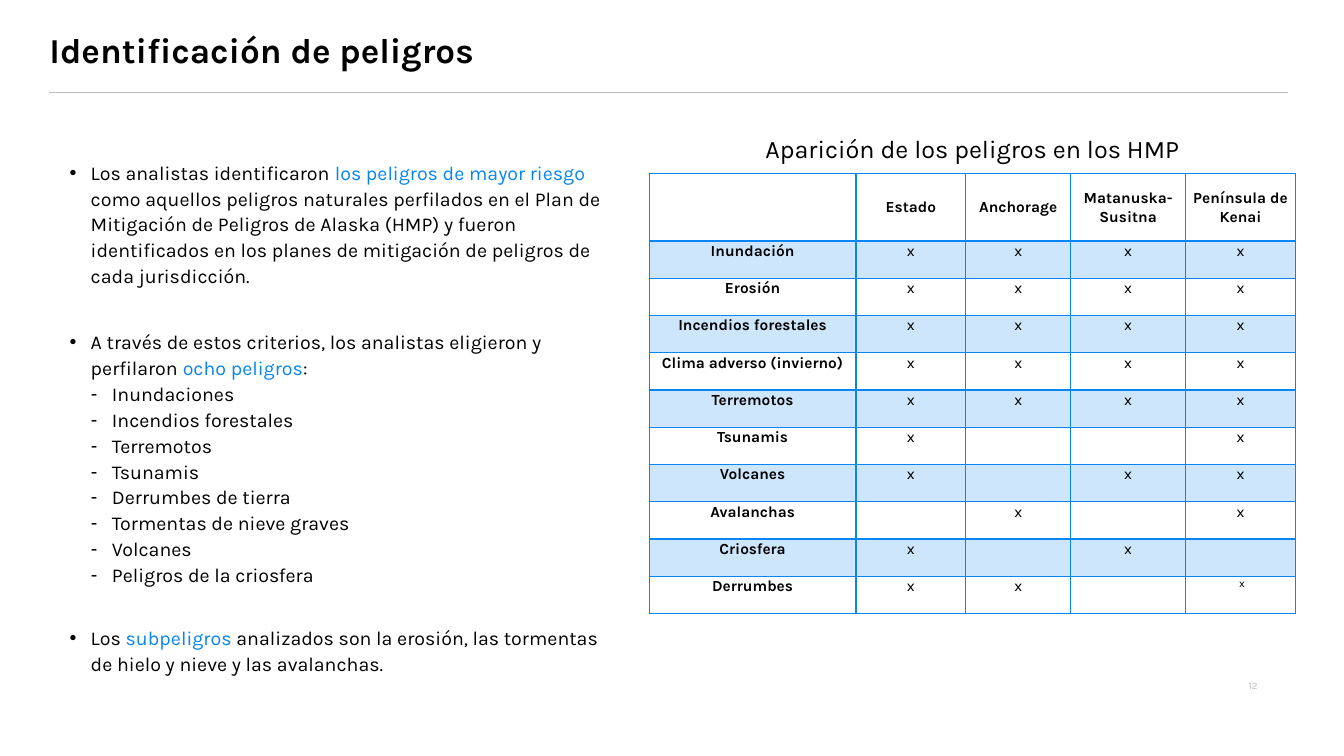
from lxml import etree
from pptx import Presentation, util as u
from pptx.dml.color import RGBColor
from pptx.enum import shapes, text
from pptx.oxml import ns

BLACK = RGBColor(0x00, 0x00, 0x00)
BLUE = RGBColor(0x07, 0x85, 0xF2)
GRAY = RGBColor(0xBC, 0xBE, 0xC0)
FONT = "Karla"

HEADING = "Identificación de peligros"
PAGE = "12"
CAPTION = "Aparición de los peligros en los HMP"

POINTS = [
    (0, 0, [("Los analistas identificaron ", BLACK),
            ("los peligros de mayor riesgo ", BLUE),
            ("como aquellos peligros naturales perfilados en el Plan de "
             "Mitigación de Peligros de Alaska (HMP) y fueron identificados en "
             "los planes de mitigación de peligros de cada jurisdicción.", BLACK)]),
    (0, 28.7, [("A través de estos criterios, los analistas eligieron y perfilaron ", BLACK),
               ("ocho peligros", BLUE), (":", BLACK)]),
    *[(1, 0, [(hazard, BLACK)]) for hazard in (
        "Inundaciones", "Incendios forestales", "Terremotos", "Tsunamis",
        "Derrumbes de tierra", "Tormentas de nieve graves", "Volcanes",
        "Peligros de la criosfera")],
    (0, 26.6, [("Los ", BLACK), ("subpeligros ", BLUE),
               ("analizados son la erosión, las tormentas de hielo y nieve y "
                "las avalanchas.", BLACK)]),
]

PLACES = ["", "Estado", "Anchorage", "Matanuska-Susitna", "Península de Kenai"]
OCCURRENCE = [
    ("Inundación", "xxxx"),
    ("Erosión", "xxxx"),
    ("Incendios forestales", "xxxx"),
    ("Clima adverso (invierno)", "xxxx"),
    ("Terremotos", "xxxx"),
    ("Tsunamis", "x--x"),
    ("Volcanes", "x-xx"),
    ("Avalanchas", "-x-x"),
    ("Criosfera", "x-x-"),
    ("Derrumbes", "xx-x"),
]
COLUMNS = [2.05, 1.09, 1.04, 1.14, 1.09]
HEADER_HEIGHT, ROW_HEIGHT = 0.67, 0.37
TABLE_LEFT, TABLE_TOP, TABLE_WIDTH = 6.44, 1.72, sum(COLUMNS)
MARGIN = 0.49


def add_run(paragraph, words, size, color=BLACK, bold=False):
    run = paragraph.add_run()
    run.text = words
    run.font.name = FONT
    run.font.size = u.Pt(size)
    run.font.bold = bold
    run.font.color.rgb = color


def place(shape, *box):
    shape.left, shape.top, shape.width, shape.height = map(u.Inches, box)


def prepare(frame, anchor, side=0.0):
    frame.word_wrap = True
    frame.auto_size = text.MSO_AUTO_SIZE.NONE
    frame.vertical_anchor = anchor
    frame.margin_left = frame.margin_right = u.Inches(side)
    frame.margin_top = frame.margin_bottom = u.Inches(0.05)


def set_bullet(paragraph, symbol, left):
    props = paragraph._p.get_or_add_pPr()
    props.set("marL", str(u.Inches(left)))
    props.set("indent", str(-u.Inches(0.21)))
    font = etree.SubElement(props, ns.qn("a:buFont"))
    font.set("typeface", "Arial")
    etree.SubElement(props, ns.qn("a:buChar")).set("char", symbol)


def set_borders(cell, heavy):
    props = cell._tc.get_or_add_tcPr()
    for side in ("lnL", "lnR", "lnT", "lnB"):
        width = 2 if side in heavy else 1
        line = etree.SubElement(props, ns.qn("a:" + side))
        line.set("w", str(u.Pt(width)))
        solid = etree.SubElement(line, ns.qn("a:solidFill"))
        etree.SubElement(solid, ns.qn("a:srgbClr")).set("val", str(BLUE))


def set_band(cell, banded):
    if not banded:
        cell.fill.background()
        return
    cell.fill.solid()
    cell.fill.fore_color.rgb = BLUE
    color = cell._tc.tcPr.find(ns.qn("a:solidFill") + "/" + ns.qn("a:srgbClr"))
    etree.SubElement(color, ns.qn("a:alpha")).set("val", "20000")


def add_label(slide, words, box, size, color, align, anchor):
    label = slide.shapes.add_textbox(*map(u.Inches, box))
    prepare(label.text_frame, anchor, 0.1)
    paragraph = label.text_frame.paragraphs[0]
    paragraph.alignment = align
    add_run(paragraph, words, size, color)


def add_heading(slide):
    rule = slide.shapes.add_connector(
        shapes.MSO_CONNECTOR.STRAIGHT, u.Inches(MARGIN), u.Inches(0.92),
        u.Inches(12.77), u.Inches(0.92))
    rule.line.color.rgb = GRAY
    rule.line.width = u.Pt(0.5)
    etree.SubElement(rule._element.spPr, ns.qn("a:effectLst"))
    heading = slide.shapes.title
    place(heading, MARGIN, 0.1, 10.85, 0.83)
    prepare(heading.text_frame, text.MSO_ANCHOR.MIDDLE)
    paragraph = heading.text_frame.paragraphs[0]
    paragraph.alignment = text.PP_ALIGN.LEFT
    paragraph.line_spacing = 0.9
    add_run(paragraph, HEADING, 25, bold=True)


def add_points(slide):
    body = slide.placeholders[1]
    place(body, 0.69, 1.52, 5.42, 5.1)
    frame = body.text_frame
    prepare(frame, text.MSO_ANCHOR.TOP)
    for i, (level, before, runs) in enumerate(POINTS):
        paragraph = frame.add_paragraph() if i else frame.paragraphs[0]
        paragraph.level = level
        paragraph.alignment = text.PP_ALIGN.LEFT
        paragraph.line_spacing = 1.1
        paragraph.space_before = u.Pt(before)
        paragraph.space_after = u.Pt(0)
        set_bullet(paragraph, "•-"[level], 0.21 * (level + 1))
        for words, color in runs:
            add_run(paragraph, words, 14, color)


def add_occurrence(slide):
    rows = [PLACES] + [[hazard, *marks.replace("-", " ")] for hazard, marks in OCCURRENCE]
    height = HEADER_HEIGHT + ROW_HEIGHT * len(OCCURRENCE)
    table = slide.shapes.add_table(
        len(rows), len(COLUMNS), u.Inches(TABLE_LEFT), u.Inches(TABLE_TOP),
        u.Inches(TABLE_WIDTH), u.Inches(height)).table
    table.first_row = table.horz_banding = False
    for column, width in zip(table.columns, COLUMNS):
        column.width = u.Inches(width)
    for r, row in enumerate(rows):
        table.rows[r].height = u.Inches(ROW_HEIGHT if r else HEADER_HEIGHT)
        for c, words in enumerate(row):
            cell = table.cell(r, c)
            cell.margin_left = cell.margin_right = u.Inches(0.07)
            cell.margin_top = cell.margin_bottom = 0
            cell.vertical_anchor = text.MSO_ANCHOR.TOP if r else text.MSO_ANCHOR.MIDDLE
            set_borders(cell, {0: ("lnB",), 1: ("lnT",)}.get(r, ()))
            set_band(cell, r % 2 == 1)
            if words.strip():
                paragraph = cell.text_frame.paragraphs[0]
                paragraph.alignment = text.PP_ALIGN.CENTER
                paragraph.line_spacing = 1.07
                last = r == len(rows) - 1 and c == len(row) - 1
                add_run(paragraph, "\N{NO-BREAK SPACE}" + words if last else words,
                        8 if last else 11, bold=r == 0 or c == 0)


def main():
    deck = Presentation()
    deck.slide_width, deck.slide_height = u.Inches(13.33), u.Inches(7.5)
    slide = deck.slides.add_slide(deck.slide_layouts[1])
    add_heading(slide)
    add_label(slide, PAGE, (9.93, 6.6, 2.64, 0.4), 7, GRAY,
              text.PP_ALIGN.RIGHT, text.MSO_ANCHOR.MIDDLE)
    add_points(slide)
    add_occurrence(slide)
    add_label(slide, CAPTION, (TABLE_LEFT, 1.27, TABLE_WIDTH, 0.4), 18, BLACK,
              text.PP_ALIGN.CENTER, text.MSO_ANCHOR.TOP)
    deck.save("out.pptx")


if __name__ == "__main__":
    main()
